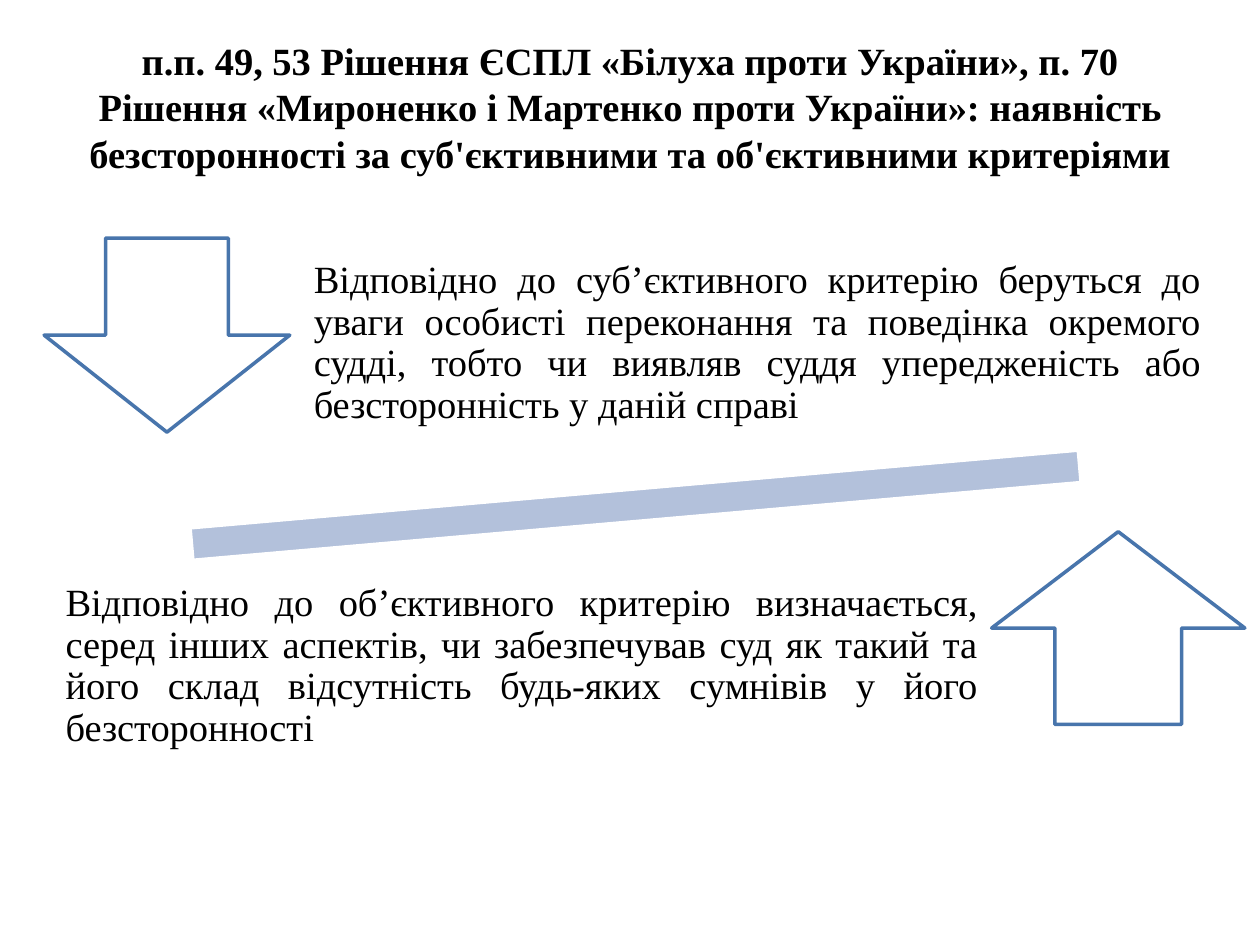
from dataclasses import dataclass

from pptx import Presentation
from pptx.dml.color import RGBColor
from pptx.enum.shapes import MSO_SHAPE
from pptx.enum.text import MSO_ANCHOR, PP_ALIGN
from pptx.util import Inches, Pt


@dataclass(frozen=True)
class Theme:
    font: str = "Times New Roman"
    size: int = 22
    line_width: int = 2
    text: str = "000000"
    paper: str = "FFFFFF"
    arrow_line: str = "4875AC"
    divider: str = "B3C1DB"


THEME = Theme()

TITLE = ("п.п. 49, 53 Рішення ЄСПЛ «Білуха проти України», п. 70 "
         "Рішення «Мироненко і Мартенко проти України»: наявність "
         "безсторонності за суб'єктивними та об'єктивними критеріями")
SUBJECTIVE = ("Відповідно до суб’єктивного критерію беруться до уваги особисті "
              "переконання та поведінка окремого судді, тобто чи виявляв суддя "
              "упередженість або безсторонність у даній справі")
OBJECTIVE = ("Відповідно до об’єктивного критерію визначається, серед інших "
             "аспектів, чи забезпечував суд як такий та його склад відсутність "
             "будь-яких сумнівів у його безсторонності")


def add_text(slide, box, text, align, anchor, bold=False):
    """Place one paragraph in a box and return its text frame and paragraph."""
    tf = slide.shapes.add_textbox(*map(Inches, box)).text_frame
    tf.word_wrap = True
    tf.vertical_anchor = anchor
    p = tf.paragraphs[0]
    p.alignment = align
    r = p.add_run()
    r.text = text
    r.font.name = THEME.font
    r.font.size = Pt(THEME.size)
    r.font.bold = bold
    r.font.color.rgb = RGBColor.from_string(THEME.text)
    return tf, p


def add_figure(slide, box, kind, fill, line, rotation=0):
    sp = slide.shapes.add_shape(kind, *map(Inches, box))
    sp.shadow.inherit = False
    sp.rotation = rotation
    sp.fill.solid()
    sp.fill.fore_color.rgb = RGBColor.from_string(fill)
    sp.line.color.rgb = RGBColor.from_string(line)
    sp.line.width = Pt(THEME.line_width)


def add_title(slide, box):
    add_text(slide, box, TITLE, PP_ALIGN.CENTER, MSO_ANCHOR.MIDDLE, bold=True)


def add_divider(slide, box):
    add_figure(slide, box, MSO_SHAPE.MATH_MINUS, THEME.divider, THEME.paper, 355)


def add_criterion(slide, arrow_box, text_box, arrow, text, anchor):
    """An outlined arrow beside the justified text of one criterion."""
    add_figure(slide, arrow_box, arrow, THEME.paper, THEME.arrow_line)
    tf, p = add_text(slide, text_box, text, PP_ALIGN.JUSTIFY, anchor)
    tf.margin_left = tf.margin_right = Inches(0.17)
    tf.margin_top = tf.margin_bottom = Inches(0.17)
    p.line_spacing = 0.9


def main():
    prs = Presentation()
    prs.slide_width, prs.slide_height = Inches(10), Inches(7.5)
    slide = prs.slides.add_slide(prs.slide_layouts[6])

    # Heading
    add_title(slide, (0.5, 0.3, 9, 1.09))

    # Slanted bar between the two criteria
    add_divider(slide, (0.23, 3.46, 9.63, 1.1))

    # Subjective criterion above, objective criterion below
    add_criterion(slide, (0.35, 1.89, 1.95, 1.54), (2.32, 1.52, 7.38, 2.41),
                  MSO_SHAPE.DOWN_ARROW, SUBJECTIVE, MSO_ANCHOR.MIDDLE)
    add_criterion(slide, (7.87, 4.22, 2.01, 1.53), (0.35, 4.46, 7.58, 2.73),
                  MSO_SHAPE.UP_ARROW, OBJECTIVE, MSO_ANCHOR.TOP)

    prs.save("out.pptx")


if __name__ == "__main__":
    main()
